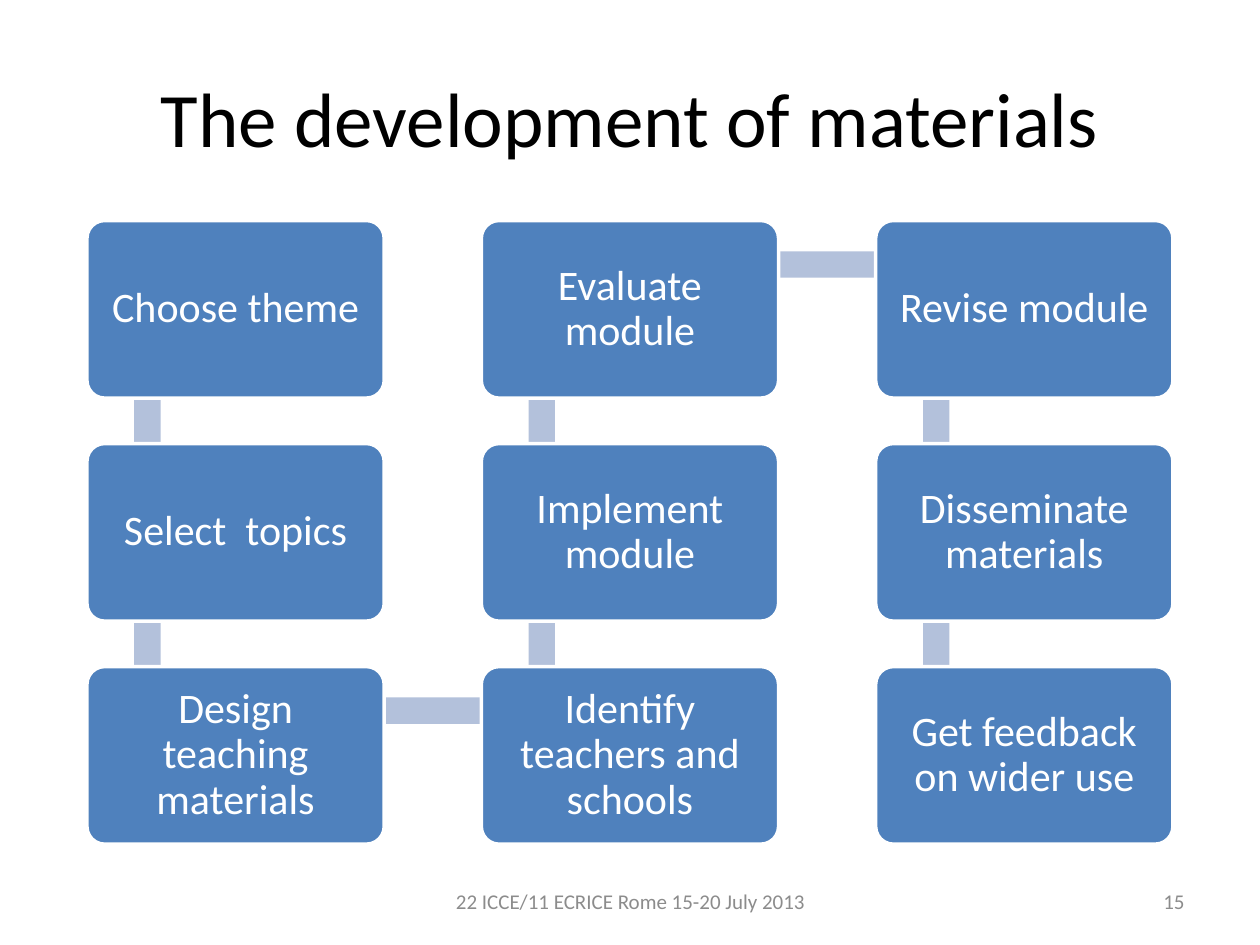
from dataclasses import dataclass
from itertools import pairwise
from math import atan2, degrees, hypot

from pptx import Presentation
from pptx.dml.color import RGBColor
from pptx.enum.shapes import MSO_SHAPE
from pptx.enum.text import MSO_ANCHOR, PP_ALIGN
from pptx.util import Inches, Pt

FONT = "Calibri"
BLUE, PALE_BLUE, GREY = "4F81BD", "B3C1DB", "8C8C8C"
WHITE, BLACK = "FFFFFF", "000000"

# Grid of step boxes
GRID_LEFT, GRID_TOP = 0.69, 1.75
COLUMN_PITCH, ROW_PITCH = 3.13, 1.77
BOX_WIDTH, BOX_HEIGHT = 2.36, 1.41
# Each bar runs between points this far inside two consecutive boxes
ANCHOR_X, ANCHOR_Y = 0.48, 0.35
BAR_THICKNESS = 0.21


@dataclass
class Step:
    text: str
    column: int
    row: int

    @property
    def left(self) -> float:
        return GRID_LEFT + self.column * COLUMN_PITCH

    @property
    def top(self) -> float:
        return GRID_TOP + self.row * ROW_PITCH


@dataclass
class Label:
    text: str
    left: float
    top: float
    width: float
    height: float
    size: int
    color: str
    align: PP_ALIGN


# The path snakes down, up and down through the columns
STEPS = [
    Step("Choose theme", 0, 0),
    Step("Select  topics", 0, 1),
    Step("Design teaching materials", 0, 2),
    Step("Identify teachers and schools", 1, 2),
    Step("Implement module", 1, 1),
    Step("Evaluate module", 1, 0),
    Step("Revise module", 2, 0),
    Step("Disseminate materials", 2, 1),
    Step("Get feedback on wider use", 2, 2),
]

LABELS = [
    Label("The development of materials", 0.5, 0.3, 9, 1.25, 44, BLACK, PP_ALIGN.CENTER),
    Label("22 ICCE/11 ECRICE Rome 15-20 July 2013", 3.42, 6.95, 3.17, 0.4, 12, GREY, PP_ALIGN.CENTER),
    Label("15", 7.17, 6.95, 2.33, 0.4, 12, GREY, PP_ALIGN.RIGHT),
]


def rgb(color: str) -> RGBColor:
    return RGBColor.from_string(color)


def write(frame, text: str, size: int, color: str, align: PP_ALIGN):
    frame.word_wrap = True
    frame.vertical_anchor = MSO_ANCHOR.MIDDLE
    para = frame.paragraphs[0]
    para.alignment = align
    span = para.add_run()
    span.text = text
    span.font.name = FONT
    span.font.size = Pt(size)
    span.font.color.rgb = rgb(color)
    return para


def add_block(page, kind: MSO_SHAPE, left: float, top: float,
              width: float, height: float, fill: str):
    block = page.shapes.add_shape(
        kind, Inches(left), Inches(top), Inches(width), Inches(height))
    block.shadow.inherit = False
    block.fill.solid()
    block.fill.fore_color.rgb = rgb(fill)
    block.line.fill.background()
    return block


def add_bar(page, start: Step, end: Step) -> None:
    across, down = end.left - start.left, end.top - start.top
    length = hypot(across, down)
    center_x = start.left + ANCHOR_X + across / 2
    center_y = start.top + ANCHOR_Y + down / 2
    bar = add_block(page, MSO_SHAPE.RECTANGLE, center_x - length / 2,
                    center_y - BAR_THICKNESS / 2, length, BAR_THICKNESS, PALE_BLUE)
    bar.rotation = degrees(atan2(down, across)) % 360


def add_step(page, step: Step) -> None:
    box = add_block(page, MSO_SHAPE.ROUNDED_RECTANGLE, step.left, step.top,
                    BOX_WIDTH, BOX_HEIGHT, BLUE)
    box.adjustments[0] = 0.1
    box.line.color.rgb = rgb(WHITE)
    box.line.width = Pt(2)
    frame = box.text_frame
    frame.margin_left = frame.margin_right = Inches(0.1)
    frame.margin_top = frame.margin_bottom = Inches(0.1)
    para = write(frame, step.text, 24, WHITE, PP_ALIGN.CENTER)
    para.line_spacing = 0.9


def add_label(page, label: Label) -> None:
    box = page.shapes.add_textbox(Inches(label.left), Inches(label.top),
                                  Inches(label.width), Inches(label.height))
    write(box.text_frame, label.text, label.size, label.color, label.align)


def main() -> None:
    deck = Presentation()
    deck.slide_width, deck.slide_height = Inches(10), Inches(7.5)
    page = deck.slides.add_slide(deck.slide_layouts[6])

    # Bars lie behind the boxes
    for start, end in pairwise(STEPS):
        add_bar(page, start, end)
    for step in STEPS:
        add_step(page, step)

    # Title, footer and page number
    for label in LABELS:
        add_label(page, label)

    deck.save("out.pptx")


if __name__ == "__main__":
    main()
